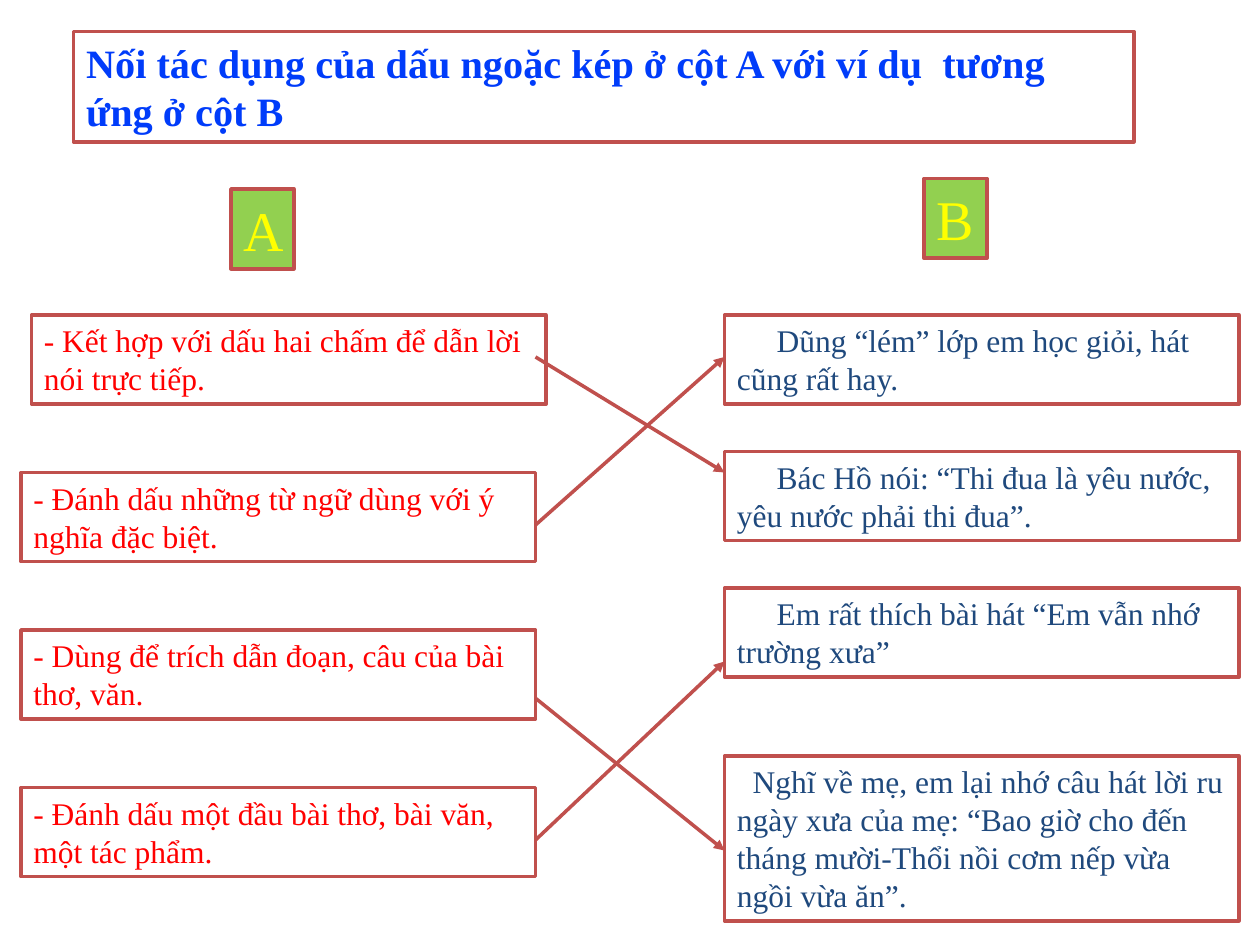
from dataclasses import dataclass

from lxml import etree
from pptx import Presentation
from pptx.dml.color import RGBColor
from pptx.enum.shapes import MSO_CONNECTOR
from pptx.enum.text import MSO_ANCHOR, MSO_AUTO_SIZE, PP_ALIGN
from pptx.oxml.ns import qn
from pptx.util import Emu, Pt

STRAIGHT = MSO_CONNECTOR.STRAIGHT
TOP = MSO_ANCHOR.TOP
GROW = MSO_AUTO_SIZE.SHAPE_TO_FIT_TEXT
LEFT = PP_ALIGN.LEFT

EMU_PER_PX = 7620  # 120 px to the inch
FONT = "Times New Roman"
BORDER, WHITE, GREEN = "C0504D", "FFFFFF", "92D050"
BLUE, RED, NAVY, YELLOW = "003CFA", "FF0000", "1F497D", "FFFF00"

CARD_WIDTH, CARD_HEIGHT = 490, 85
USES_LEFT, EXAMPLES_LEFT = 20, 690
USES_TOP, USES_PITCH = 300, 150
LINK_START = USES_LEFT + CARD_WIDTH


@dataclass(frozen=True)
class Card:
    text: str
    left: int
    top: int
    width: int = CARD_WIDTH
    height: int = CARD_HEIGHT
    color: str = RED
    size: int = 18
    fill: str = WHITE
    bold: bool = False
    indent: int = 0


@dataclass(frozen=True)
class Link:
    start_y: int
    end_y: int


HEADING = Card("Nối tác dụng của dấu ngoặc kép ở cột A với ví dụ  tương ứng ở cột B",
               70, 30, 1010, 105, BLUE, 23, bold=True)

USES = [
    "- Kết hợp với dấu hai chấm để dẫn lời nói trực tiếp.",
    "- Đánh dấu những từ ngữ dùng với ý nghĩa đặc biệt.",
    "- Dùng để trích dẫn đoạn, câu của bài thơ, văn.",
    "- Đánh dấu một đầu bài thơ, bài văn, một tác phẩm.",
]
# The first use stands slightly to the right of the others.
USE_CARDS = [Card(text, USES_LEFT + (10 if row == 0 else 0), USES_TOP + row * USES_PITCH)
             for row, text in enumerate(USES)]

EXAMPLE_CARDS = [
    Card("Dũng “lém” lớp em học giỏi, hát cũng rất hay.",
         EXAMPLES_LEFT, 300, color=NAVY, indent=38),
    Card("Bác Hồ nói: “Thi đua là yêu nước, yêu nước phải thi đua”.",
         EXAMPLES_LEFT, 430, color=NAVY, indent=38),
    Card("Em rất thích bài hát “Em vẫn nhớ trường xưa”",
         EXAMPLES_LEFT, 560, color=NAVY, indent=38),
    Card("Nghĩ về mẹ, em lại nhớ câu hát lời ru ngày xưa của mẹ: “Bao giờ cho đến "
         "tháng mười-Thổi nồi cơm nếp vừa ngồi vừa ăn”.",
         EXAMPLES_LEFT, 720, height=157, color=NAVY, indent=15),
]

COLUMN_LABELS = [
    Card("A", 220, 180, 60, 76, YELLOW, 32, GREEN),
    Card("B", 880, 170, 60, 76, YELLOW, 32, GREEN),
]

LINKS = [Link(340, 450), Link(500, 340), Link(665, 810), Link(800, 630)]


def px(length: int) -> Emu:
    return Emu(length * EMU_PER_PX)


def rgb(color: str) -> RGBColor:
    return RGBColor.from_string(color)


def style_border(line) -> None:
    line.color.rgb = rgb(BORDER)
    line.width = Pt(2)


def format_card(shape, card: Card) -> None:
    """Place a text box or placeholder and give it the card's text and look."""
    shape.left, shape.top = px(card.left), px(card.top)
    shape.width, shape.height = px(card.width), px(card.height)
    shape.fill.solid()
    shape.fill.fore_color.rgb = rgb(card.fill)
    style_border(shape.line)

    frame = shape.text_frame
    frame.text = card.text
    frame.word_wrap = True
    frame.auto_size = GROW
    frame.vertical_anchor = TOP

    paragraph = frame.paragraphs[0]
    paragraph.alignment = LEFT
    if card.indent:
        paragraph._p.get_or_add_pPr().set("indent", str(px(card.indent)))
    font = paragraph.font
    font.name = FONT
    font.size = Pt(card.size)
    font.bold = card.bold
    font.color.rgb = rgb(card.color)


def add_card(slide, card: Card) -> None:
    box = slide.shapes.add_textbox(px(card.left), px(card.top), px(card.width), px(card.height))
    format_card(box, card)


def add_link(slide, link: Link) -> None:
    arrow = slide.shapes.add_connector(STRAIGHT, px(LINK_START), px(link.start_y),
                                       px(EXAMPLES_LEFT), px(link.end_y))
    style_border(arrow.line)
    properties = arrow._element.spPr
    etree.SubElement(properties.find(qn("a:ln")), qn("a:tailEnd"), type="triangle")
    etree.SubElement(properties, qn("a:effectLst"))


def main() -> None:
    presentation = Presentation()
    presentation.slide_width, presentation.slide_height = px(1200), px(900)
    title_only = presentation.slide_layouts[5]
    slide = presentation.slides.add_slide(title_only)

    format_card(slide.shapes.title, HEADING)
    for card in USE_CARDS + EXAMPLE_CARDS + COLUMN_LABELS:
        add_card(slide, card)
    for link in LINKS:
        add_link(slide, link)
    presentation.save("out.pptx")


if __name__ == "__main__":
    main()
